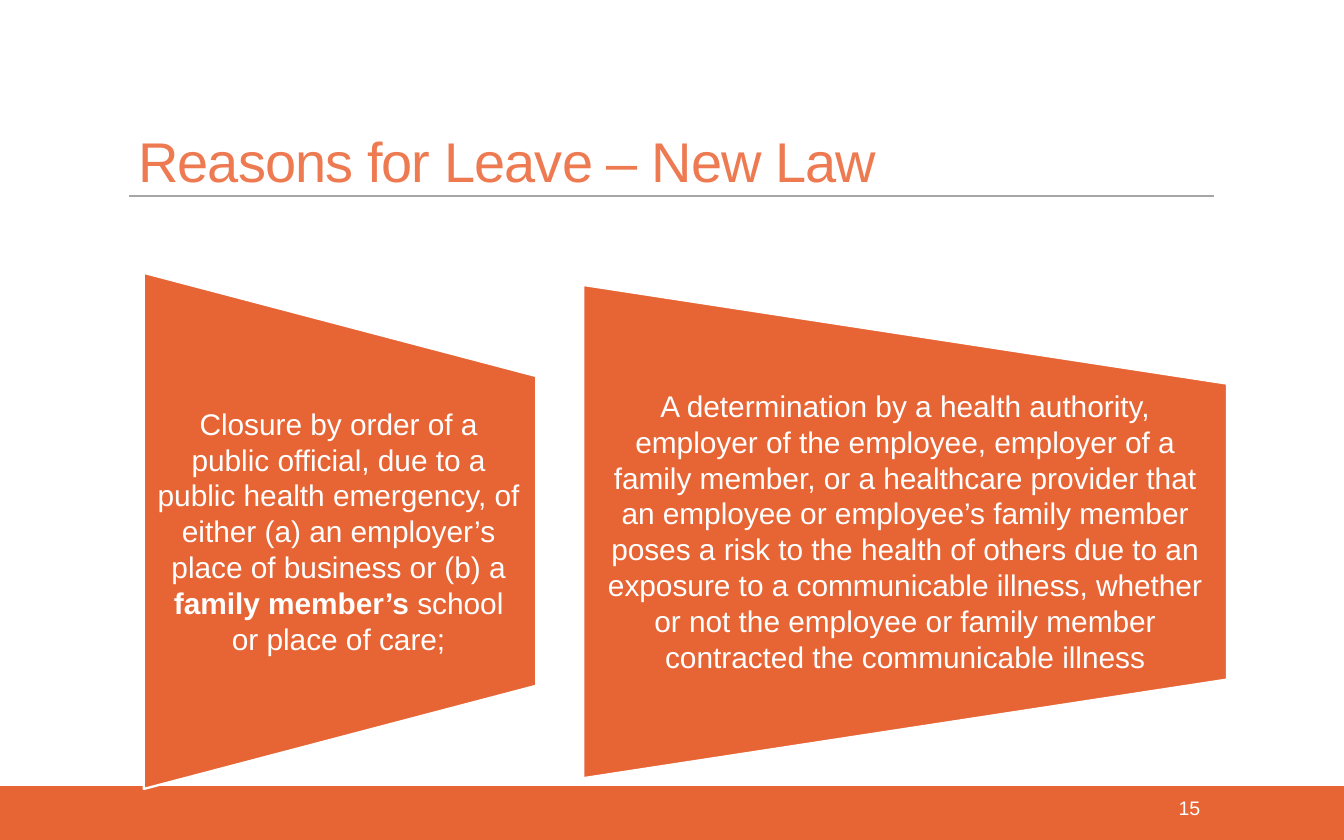
from dataclasses import dataclass

from pptx import Presentation, util as u
from pptx.dml.color import RGBColor
from pptx.enum import shapes, text
from pptx.oxml.ns import qn
from lxml import etree

ORANGE, WHITE, GREY, TITLE = "E76434", "FFFFFF", "A6A6A6", "EE7A52"
Box = tuple[float, float, float, float]


@dataclass
class Label:
    box: Box
    runs: list[tuple[str, bool]]
    size: float = 16
    color: str = WHITE
    align: text.PP_ALIGN = text.PP_ALIGN.CENTER
    anchor: text.MSO_ANCHOR = text.MSO_ANCHOR.MIDDLE
    insets: Box = (0.11, 0, 0.11, 0)
    line_spacing: float = 1.0
    tracking: float = 0


@dataclass
class Panel:
    outline: Box  # before the quarter turn
    label: Label


def rgb(value: str) -> RGBColor:
    return RGBColor.from_string(value)


def inches(box: Box) -> list[u.Length]:
    return [u.Inches(v) for v in box]


def add_block(s, kind: shapes.MSO_SHAPE, box: Box):
    sp = s.shapes.add_shape(kind, *inches(box))
    sp.shadow.inherit = False
    sp.fill.solid()
    sp.fill.fore_color.rgb = rgb(ORANGE)
    sp.line.fill.background()
    return sp


def add_label(s, label: Label) -> None:
    tf = s.shapes.add_textbox(*inches(label.box)).text_frame
    left, top, right, bottom = inches(label.insets)
    frame_format = {"word_wrap": True, "vertical_anchor": label.anchor,
                    "margin_left": left, "margin_top": top,
                    "margin_right": right, "margin_bottom": bottom}
    for name, value in frame_format.items():
        setattr(tf, name, value)
    p = tf.paragraphs[0]
    p.alignment, p.line_spacing = label.align, label.line_spacing
    for words, bold in label.runs:
        r = p.add_run()
        r.text = words
        font_format = {"name": "Arial", "size": u.Pt(label.size), "bold": bold}
        for name, value in font_format.items():
            setattr(r.font, name, value)
        r.font.color.rgb = rgb(label.color)
        if label.tracking:
            r._r.get_or_add_rPr().set("spc", str(round(label.tracking * 100)))


def add_panel(s, panel: Panel) -> None:
    sp = add_block(s, shapes.MSO_SHAPE.FLOWCHART_MANUAL_OPERATION, panel.outline)
    sp.rotation = 270
    sp.line.color.rgb = rgb(WHITE)
    sp.line.width = u.Pt(1.25)
    add_label(s, panel.label)


PANELS = [
    Panel((0.61, 2.49, 3.84, 2.92), Label((1.06, 2.8, 2.92, 2.3), [
        ("Closure by order of a public official, due to a public health emergency, "
         "of either (a) an employer’s place of business or (b) a ", False),
        ("family member’s ", True),
        ("school or place of care;", False)])),
    Panel((4.9, 1.56, 3.67, 4.79), Label((4.34, 2.85, 4.79, 2.2), [
        ("A determination by a health authority, employer of the employee, employer "
         "of a family member, or a healthcare provider that an employee or employee’s "
         "family member poses a risk to the health of others due to an exposure to a "
         "communicable illness, whether or not the employee or family member "
         "contracted the communicable illness", False)])),
]


def main() -> None:
    prs = Presentation()
    prs.slide_width, prs.slide_height = u.Inches(10), u.Inches(6.25)
    s = prs.slides.add_slide(prs.slide_layouts[6])

    # Footer band and title rule
    add_block(s, shapes.MSO_SHAPE.RECTANGLE, (0, 5.85, 10, 0.4))
    rule = s.shapes.add_connector(shapes.MSO_CONNECTOR.STRAIGHT,
                                  *inches((0.96, 1.46, 9.03, 1.46)))
    rule.line.color.rgb = rgb(GREY)
    rule.line.width = u.Pt(1)
    etree.SubElement(rule._element.spPr, qn("a:effectLst"))

    # Title and page number
    add_label(s, Label((0.93, 0.97, 6.37, 0.39), [("Reasons for Leave – New Law", False)],
                       size=30, color=TITLE, align=text.PP_ALIGN.LEFT,
                       anchor=text.MSO_ANCHOR.TOP, insets=(0.1, 0.05, 0, 0),
                       line_spacing=0.85, tracking=-0.5))
    add_label(s, Label((7.96, 5.87, 1.08, 0.33), [("15", False)], size=10.5,
                       align=text.PP_ALIGN.RIGHT, insets=(0.11, 0, 0.11, 0.05)))

    # Reasons
    for panel in PANELS:
        add_panel(s, panel)

    prs.save("out.pptx")


if __name__ == "__main__":
    main()
